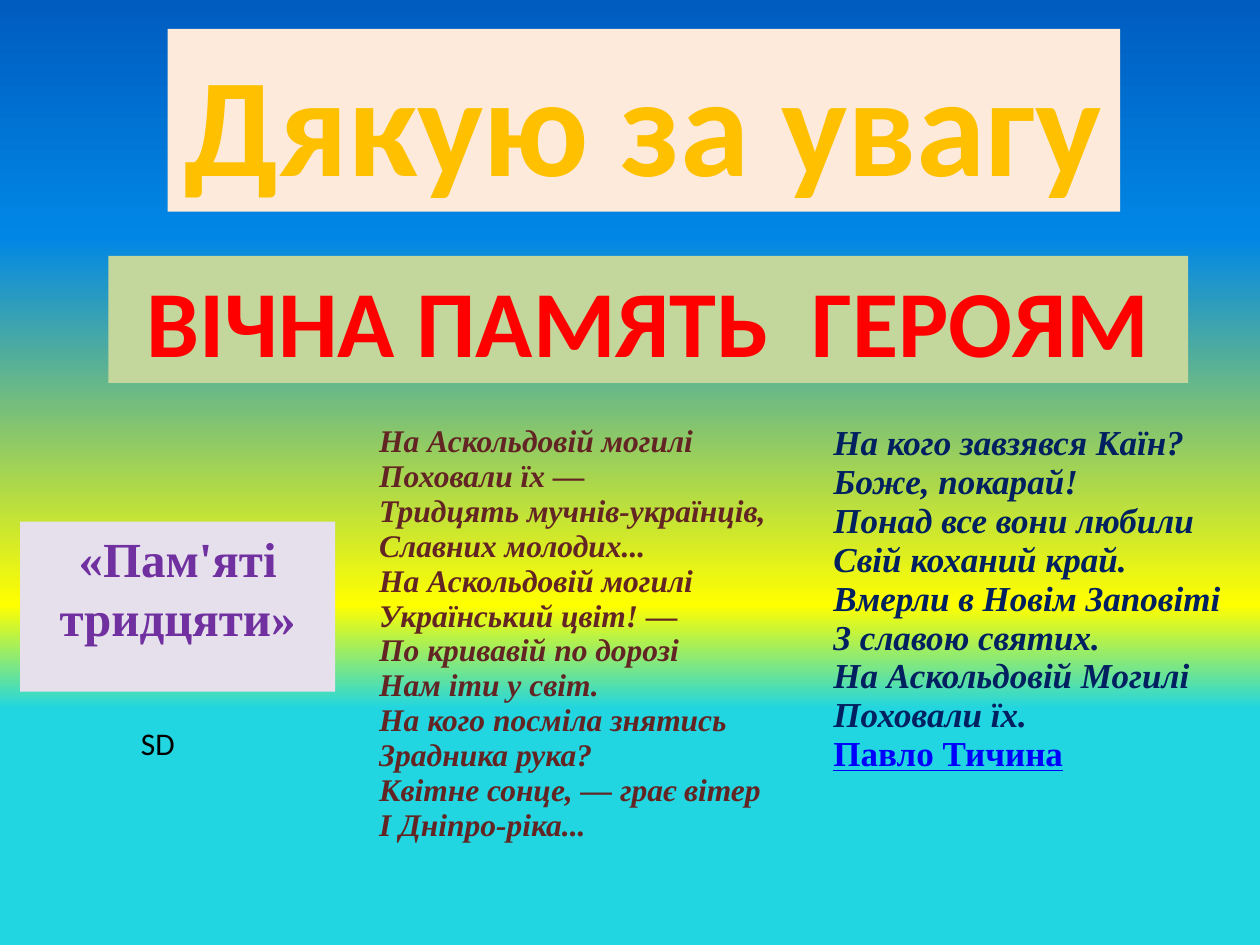
from lxml import etree
from pptx import Presentation
from pptx.dml.color import RGBColor
from pptx.enum.shapes import MSO_SHAPE
from pptx.enum.text import MSO_ANCHOR, MSO_AUTO_SIZE, PP_ALIGN
from pptx.oxml.ns import qn
from pptx.util import Inches, Pt

RECTANGLE = MSO_SHAPE.RECTANGLE
TOP, MIDDLE = MSO_ANCHOR.TOP, MSO_ANCHOR.MIDDLE
LEFT, CENTER = PP_ALIGN.LEFT, PP_ALIGN.CENTER
FIXED_SIZE = MSO_AUTO_SIZE.NONE

PEACH = RGBColor(0xFD, 0xEA, 0xDA)
SAGE = RGBColor(0xC3, 0xD6, 0x9B)
LILAC = RGBColor(0xE6, 0xE0, 0xEC)
GOLD = RGBColor(0xFF, 0xC0, 0x00)
RED = RGBColor(0xFF, 0x00, 0x00)
PURPLE = RGBColor(0x70, 0x30, 0xA0)
MAROON = RGBColor(0x63, 0x25, 0x23)
NAVY = RGBColor(0x00, 0x20, 0x60)
BLUE = RGBColor(0x00, 0x00, 0xFF)
BLACK = RGBColor(0x00, 0x00, 0x00)
TURQUOISE = RGBColor(0x21, 0xD6, 0xE0)
YELLOW = RGBColor(0xFF, 0xFF, 0x00)
SKY = RGBColor(0x00, 0x87, 0xE6)
DEEP_BLUE = RGBColor(0x00, 0x5C, 0xBF)

SANS, SERIF = "Calibri", "Times New Roman"
COLUMNS, ROWS = 100, 75
PLAIN_TABLE_STYLE = "{2D5ABB26-0587-4C30-8999-92F81FD0307C}"

SKY_STOPS = [(25, TURQUOISE), (36, YELLOW), (75, SKY), (100, DEEP_BLUE)]
FIRST_VERSE = [
    "На Аскольдовій могилі",
    "Поховали їх —",
    "Тридцять мучнів-українців,",
    "Славних молодих...",
    "На Аскольдовій могилі",
    "Український цвіт! —",
    "По кривавій по дорозі",
    "Нам іти у світ.",
    "На кого посміла знятись",
    "Зрадника рука?",
    "Квітне сонце, — грає вітер",
    "І Дніпро-ріка...",
]
SECOND_VERSE = [
    "На кого завзявся Каїн?",
    "Боже, покарай!",
    "Понад все вони любили",
    "Свій коханий край.",
    "Вмерли в Новім Заповіті",
    "З славою святих.",
    "На Аскольдовій Могилі",
    "Поховали їх.",
]
AUTHOR = "Павло Тичина"


def set_attributes(target, values):
    for name, value in values.items():
        setattr(target, name, value)


def font_format(name, size, color, **extras):
    return {"name": name, "size": Pt(size), "color": color, **extras}


class SlideBuilder:
    """Places elements on a grid of COLUMNS by ROWS."""

    def __init__(self, presentation, layout):
        self.slide = presentation.slides.add_slide(layout)
        self.column = presentation.slide_width / COLUMNS
        self.row = presentation.slide_height / ROWS

    def box(self, left, top, width, height):
        return (round(left * self.column), round(top * self.row),
                round(width * self.column), round(height * self.row))

    def background(self, stops):
        fill = self.slide.background.fill
        fill.gradient()
        fill.gradient_angle = 90
        stop_list = self.slide.element.find(".//" + qn("a:gsLst"))
        for stop in list(stop_list):
            stop_list.remove(stop)
        for percent, color in stops:
            stop = etree.SubElement(stop_list, qn("a:gs"), pos=str(percent * 1000))
            etree.SubElement(stop, qn("a:srgbClr"), val=str(color))

    def add_text(self, paragraph, text, format_values):
        run = paragraph.add_run()
        run.text = text
        values = dict(format_values)
        run.font.color.rgb = values.pop("color")
        set_attributes(run.font, values)

    def fill_text(self, shape, text, format_values, align=CENTER, anchor=MIDDLE,
                  wrap=False, line_spacing=None):
        set_attributes(shape.text_frame, {
            "auto_size": FIXED_SIZE, "word_wrap": wrap, "vertical_anchor": anchor})
        paragraph = shape.text_frame.paragraphs[0]
        set_attributes(paragraph, {"alignment": align, "line_spacing": line_spacing})
        self.add_text(paragraph, text, format_values)

    def title(self, box, text, fill, format_values):
        title = self.slide.shapes.title
        set_attributes(title, dict(zip(("left", "top", "width", "height"), self.box(*box))))
        title.fill.solid()
        title.fill.fore_color.rgb = fill
        self.fill_text(title, text, format_values)

    def panel(self, box, text, fill, format_values, **layout):
        shape = self.slide.shapes.add_shape(RECTANGLE, *self.box(*box))
        shape.shadow.inherit = False
        shape.fill.solid()
        shape.fill.fore_color.rgb = fill
        shape.line.fill.background()
        self.fill_text(shape, text, format_values, **layout)

    def label(self, box, text, format_values):
        shape = self.slide.shapes.add_textbox(*self.box(*box))
        self.fill_text(shape, text, format_values, align=LEFT, anchor=TOP)

    def verses(self, box, verses):
        """Adds a plain one-row table; each verse is a list of (line, format)."""
        graphic_frame = self.slide.shapes.add_table(1, len(verses), *self.box(*box))
        table = graphic_frame.table
        set_attributes(table, {"first_row": False, "horz_banding": False})
        graphic_frame.element.find(".//" + qn("a:tableStyleId")).text = PLAIN_TABLE_STYLE
        sides = ("left", "top", "right", "bottom")
        for cell, verse in zip(table.iter_cells(), verses):
            cell.fill.background()
            set_attributes(cell, {f"margin_{side}": Inches(0.01) for side in sides})
            text_frame = cell.text_frame
            for index, (line, format_values) in enumerate(verse):
                paragraph = text_frame.add_paragraph() if index else text_frame.paragraphs[0]
                properties = paragraph._p.get_or_add_pPr()
                properties.set("marL", str(Inches(0.5)))
                properties.set("indent", "0")
                self.add_text(paragraph, line, format_values)


def main():
    presentation = Presentation()
    presentation.slide_width, presentation.slide_height = Inches(10), Inches(7.5)
    builder = SlideBuilder(presentation, presentation.slide_layouts.get_by_name("Title Only"))

    builder.background(SKY_STOPS)
    builder.title((13.3, 2.3, 75.6, 14.5), "Дякую за увагу", PEACH,
                  font_format(SANS, 80, GOLD, bold=True))
    builder.panel((8.6, 20.3, 85.7, 10.1), "ВІЧНА ПАМЯТЬ  ГЕРОЯМ", SAGE,
                  font_format(SANS, 54, RED, bold=True))

    first_format = font_format(SERIF, 18, MAROON, bold=True, italic=True)
    second_format = font_format(SERIF, 20, NAVY, bold=True, italic=True)
    author_format = font_format(SERIF, 20, BLUE, bold=True, underline=True)
    builder.verses((25, 33.6, 72.1, 32.8), [
        [(line, first_format) for line in FIRST_VERSE],
        [(line, second_format) for line in SECOND_VERSE] + [(AUTHOR, author_format)],
    ])

    builder.panel((1.6, 41.4, 25, 13.5), "«Пам'яті тридцяти»", LILAC,
                  font_format(SERIF, 28, PURPLE, bold=True),
                  anchor=TOP, wrap=True, line_spacing=Pt(34))
    builder.label((10.2, 57, 4.7, 4), "SD", font_format(SANS, 18, BLACK))
    presentation.save("out.pptx")


if __name__ == "__main__":
    main()
